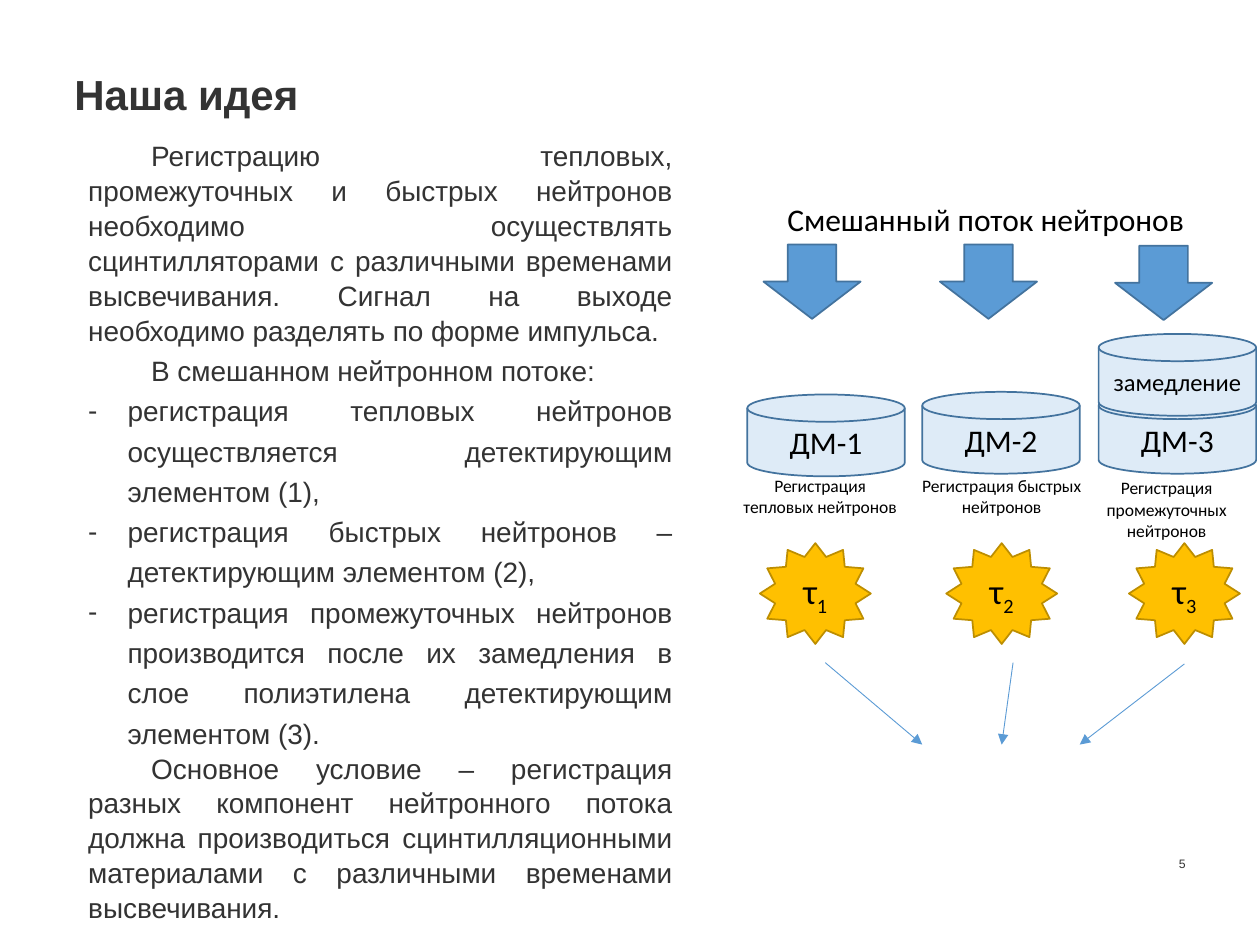
from lxml import etree
from pptx import Presentation
from pptx.dml.color import RGBColor
from pptx.enum.shapes import MSO_CONNECTOR, MSO_SHAPE
from pptx.enum.text import MSO_ANCHOR, MSO_AUTO_SIZE, PP_ALIGN
from pptx.oxml.ns import qn
from pptx.util import Pt

LEFT, MID, RIGHT, JUST = PP_ALIGN.LEFT, PP_ALIGN.CENTER, PP_ALIGN.RIGHT, PP_ALIGN.JUSTIFY
TOP, CENTER, BOTTOM = MSO_ANCHOR.TOP, MSO_ANCHOR.MIDDLE, MSO_ANCHOR.BOTTOM
FIXED = MSO_AUTO_SIZE.NONE
ARROW, DISK, STAR = MSO_SHAPE.DOWN_ARROW, MSO_SHAPE.FLOWCHART_MAGNETIC_DISK, MSO_SHAPE.STAR_12_POINT
STRAIGHT = MSO_CONNECTOR.STRAIGHT

BLACK = RGBColor(0x00, 0x00, 0x00)
GRAY = RGBColor(0x33, 0x33, 0x33)
BLUE = RGBColor(0x5B, 0x9B, 0xD5)
NAVY = RGBColor(0x43, 0x73, 0x9E)
PALE = RGBColor(0xDE, 0xEB, 0xF7)
GOLD = RGBColor(0xFF, 0xC0, 0x00)
BROWN = RGBColor(0xBD, 0x8E, 0x00)

# Text, whether it is a list item, line spacing
BODY = [
    ("\tРегистрацию тепловых, промежуточных и быстрых нейтронов необходимо "
     "осуществлять сцинтилляторами с различными временами высвечивания. "
     "Сигнал на выходе необходимо разделять по форме импульса.", False, 1.04),
    ("\tВ смешанном нейтронном потоке:", False, 1.2),
    ("регистрация тепловых нейтронов осуществляется детектирующим элементом (1),", True, 1.2),
    ("регистрация быстрых нейтронов – детектирующим элементом (2),", True, 1.2),
    ("регистрация промежуточных нейтронов производится после их замедления "
     "в слое полиэтилена детектирующим элементом (3).", True, 1.2),
    ("\tОсновное условие – регистрация разных компонент нейтронного потока "
     "должна производиться сцинтилляционными материалами с различными "
     "временами высвечивания.", False, 1.04),
]

# Left and top of each detector's disk, note and star; ends of its line
COLUMNS = [
    ((427, 225.4), (415.4, 267.8), 434.2, (471.6, 378.7, 527, 425.5),
     "Регистрация тепловых нейтронов"),
    ((527, 223.9), (519.1, 267.8), 540.7, (578.9, 378.7, 572.4, 425.5),
     "Регистрация быстрых нейтронов"),
    ((627.8, 223.9), (613.4, 269.3), 645.1, (676.8, 379.4, 617, 425.5),
     "Регистрация промежуточных нейтронов"),
]
ARROWS = [(436.3, 139.7), (537.1, 139.7), (637.2, 140.4)]


def write(para, text, size=18, font="Calibri", color=BLACK, bold=False,
          align=LEFT, spacing=None, sub=""):
    """Add text to a paragraph, with an optional subscript after it."""
    para.alignment = align
    if spacing:
        para.line_spacing = spacing
    for part in filter(None, (text, sub)):
        run = para.add_run()
        run.text = part
        run.font.size, run.font.name = Pt(size), font
        run.font.bold, run.font.color.rgb = bold, color
    if sub:
        run._r.get_or_add_rPr().set("baseline", "-25000")


def place(shape, x, y, w, h):
    shape.left, shape.top, shape.width, shape.height = Pt(x), Pt(y), Pt(w), Pt(h)


def trim(frame, anchor=TOP):
    """Remove the margins and keep the frame at its size."""
    frame.margin_left = frame.margin_right = frame.margin_top = frame.margin_bottom = 0
    frame.word_wrap, frame.auto_size = True, FIXED
    frame.vertical_anchor = anchor


def add_label(slide, x, y, w, h, text, wrap=True, **style):
    frame = slide.shapes.add_textbox(Pt(x), Pt(y), Pt(w), Pt(h)).text_frame
    frame.word_wrap = wrap
    write(frame.paragraphs[0], text, **style)
    return frame


def add_form(slide, kind, x, y, w, h, fill, edge, text="", **style):
    form = slide.shapes.add_shape(kind, Pt(x), Pt(y), Pt(w), Pt(h))
    form.shadow.inherit = False
    form.fill.solid()
    form.fill.fore_color.rgb = fill
    form.line.color.rgb, form.line.width = edge, Pt(1)
    if text:
        form.text_frame.vertical_anchor = CENTER
        write(form.text_frame.paragraphs[0], text, align=MID, **style)


def add_line(slide, *ends):
    line = slide.shapes.add_connector(STRAIGHT, *map(Pt, ends))
    line.line.color.rgb, line.line.width = BLUE, Pt(0.5)
    etree.SubElement(line.line._get_or_add_ln(), qn("a:tailEnd"), type="triangle")
    etree.SubElement(line._element.spPr, qn("a:effectLst"))


def set_list(para, item):
    """Give a paragraph a dash, or a tabbed first line without one."""
    props = para._p.get_or_add_pPr()
    indent = Pt(22.5) if item else 0
    props.set("marL", str(indent))
    props.set("indent", str(-indent))
    if item:
        etree.SubElement(props, qn("a:buFont"), typeface="Arial")
        etree.SubElement(props, qn("a:buChar"), char="-")
    else:
        etree.SubElement(props, qn("a:buNone"))
        tabs = etree.SubElement(props, qn("a:tabLst"))
        etree.SubElement(tabs, qn("a:tab"), pos=str(Pt(72)), algn="l")


def fill_text(slide):
    title, body = slide.shapes.title, slide.placeholders[1]
    place(title, 42.5, 42.5, 438.5, 36)
    trim(title.text_frame)
    write(title.text_frame.paragraphs[0], "Наша идея", size=24, font="Arial",
          color=GRAY, bold=True, spacing=0.9)

    place(body, 50.4, 78.5, 334, 412)
    frame = body.text_frame
    trim(frame)
    for i, (text, item, spacing) in enumerate(BODY):
        para = frame.add_paragraph() if i else frame.paragraphs[0]
        set_list(para, item)
        para.space_before = Pt(0)
        write(para, text, size=16, font="Arial", color=GRAY, align=JUST, spacing=spacing)


def draw_scheme(slide):
    add_label(slide, 442.8, 110.9, 244, 29, "Смешанный поток нейтронов", wrap=False)
    for x, y in ARROWS:
        add_form(slide, ARROW, x, y, 55.5, 42.5, BLUE, NAVY)
    for n, (disk, note, star, ends, text) in enumerate(COLUMNS, 1):
        add_form(slide, DISK, *disk, 90, 46.8, PALE, NAVY, f"ДМ-{n}")
        add_label(slide, *note, 106.5, 31.5, text, size=10, align=MID)
        add_form(slide, STAR, star, 310.4, 63.4, 57.6, GOLD, BROWN, "τ", size=20, sub=str(n))
        add_line(slide, *ends)
    add_form(slide, DISK, 627.8, 190.8, 90, 46.8, PALE, NAVY, "замедление", size=14)


def main():
    deck = Presentation()
    deck.slide_width, deck.slide_height = Pt(720), Pt(540)
    slide = deck.slides.add_slide(deck.slide_layouts[1])
    fill_text(slide)
    draw_scheme(slide)
    number = add_label(slide, 632.2, 486, 45.4, 11.5, "5", size=7, font="Arial",
                       color=GRAY, align=RIGHT)
    trim(number, BOTTOM)
    deck.save("out.pptx")


if __name__ == "__main__":
    main()
